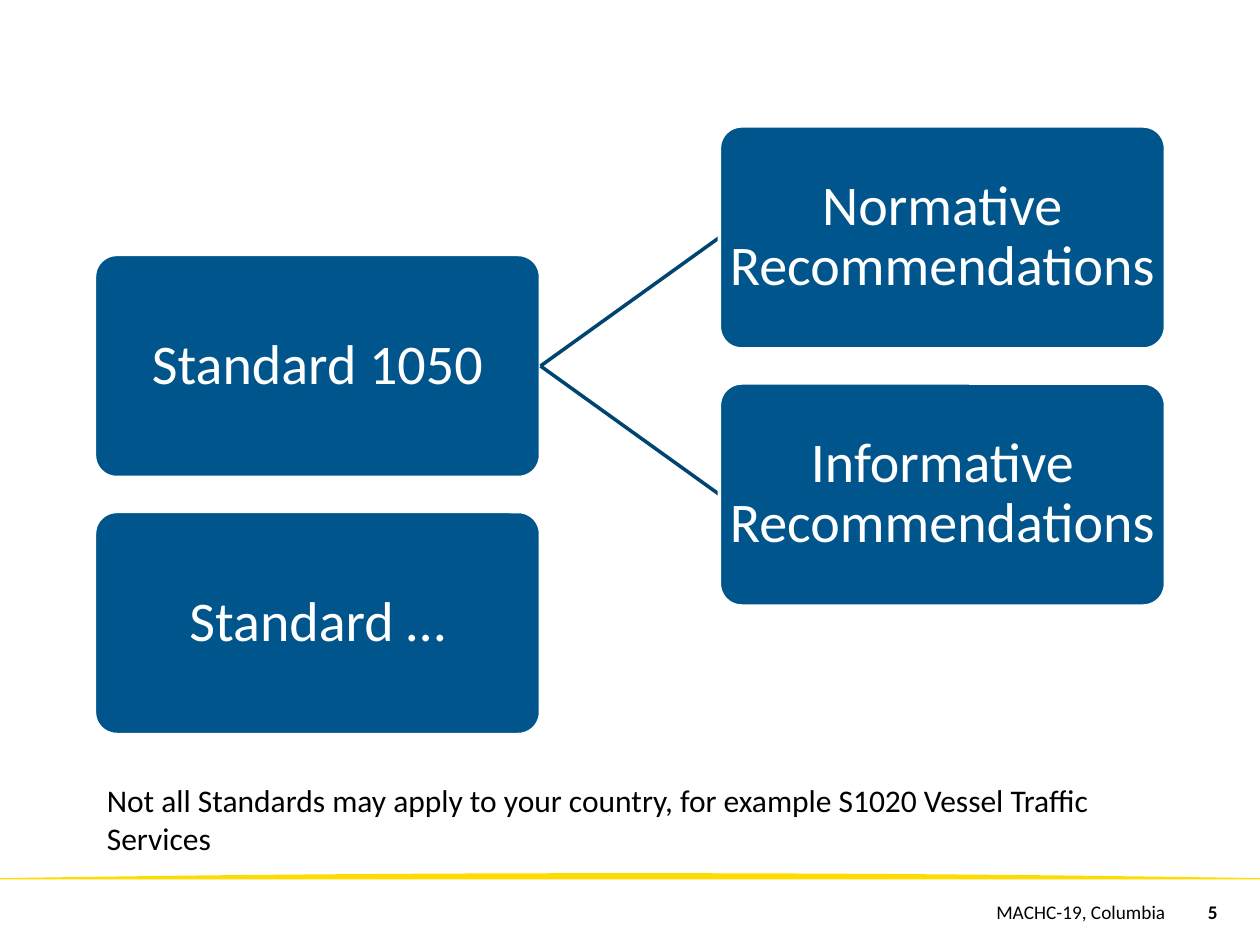
from dataclasses import dataclass

from lxml.etree import SubElement
from pptx import Presentation
from pptx.dml.color import RGBColor
from pptx.enum.shapes import MSO_CONNECTOR, MSO_SHAPE
from pptx.enum.text import MSO_ANCHOR, PP_ALIGN
from pptx.oxml.ns import qn
from pptx.util import Inches, Pt

BLUE, DARK_BLUE, YELLOW = "00558C", "004470", "FFDC00"
WHITE, BLACK = "FFFFFF", "000000"
BOX_WIDTH, BOX_HEIGHT = 3.54, 1.77
LEFT_COLUMN, RIGHT_COLUMN = 0.75, 5.71
TOP, ROW_STEP = 1.0, 1.02


@dataclass(frozen=True)
class Node:
    label: str
    left: float
    row: int

    @property
    def top(self) -> float:
        return TOP + self.row * ROW_STEP

    @property
    def middle(self) -> float:
        return self.top + BOX_HEIGHT / 2


@dataclass(frozen=True)
class Caption:
    text: str
    left: float
    top: float
    width: float
    height: float
    size: int
    align: PP_ALIGN = PP_ALIGN.LEFT
    anchor: MSO_ANCHOR = MSO_ANCHOR.MIDDLE
    margin_x: float = 0
    margin_y: float = 0
    bold: bool = False


STANDARD = Node("Standard 1050", LEFT_COLUMN, 1)
RECOMMENDATIONS = [
    Node("Normative Recommendations", RIGHT_COLUMN, 0),
    Node("Informative Recommendations", RIGHT_COLUMN, 2),
]
OTHER_STANDARD = Node("Standard …", LEFT_COLUMN, 3)

CAPTIONS = [
    Caption("5", 9.25, 6.98, 0.75, 0.52, 11, PP_ALIGN.CENTER, bold=True),
    Caption("MACHC-19, Columbia", 3.11, 6.98, 6.14, 0.52, 11, PP_ALIGN.RIGHT),
    Caption(
        "Not all Standards may apply to your country, "
        "for example S1020 Vessel Traffic Services",
        0.75, 6.15, 8.5, 0.71, 18,
        anchor=MSO_ANCHOR.TOP, margin_x=0.1, margin_y=0.05,
    ),
]


def rgb(value: str) -> RGBColor:
    return RGBColor.from_string(value)


def write(frame, text: str, size: int, color: str, align: PP_ALIGN,
          anchor: MSO_ANCHOR, margin_x: float, margin_y: float,
          bold: bool = False):
    frame.word_wrap = True
    frame.vertical_anchor = anchor
    frame.margin_left = frame.margin_right = Inches(margin_x)
    frame.margin_top = frame.margin_bottom = Inches(margin_y)
    frame.text = text
    paragraph = frame.paragraphs[0]
    paragraph.alignment = align
    font = paragraph.runs[0].font
    font.name = "Calibri"
    font.size = Pt(size)
    font.bold = bold
    font.color.rgb = rgb(color)
    return paragraph


def draw_footer_arc(slide) -> None:
    steps, width, edge, crest, bottom = 40, 10.01, 6.97, 6.93, 6.98
    arc = []
    for step in range(steps + 1):
        offset = 2 * step / steps - 1
        arc.append((Inches(width * step / steps),
                    Inches(crest + (edge - crest) * offset ** 2)))
    base = [(Inches(width), Inches(bottom)), (0, Inches(bottom))]
    builder = slide.shapes.build_freeform(*arc[0], scale=1.0)
    builder.add_line_segments(arc[1:] + base, close=True)
    band = builder.convert_to_shape()
    band.shadow.inherit = False
    band.fill.solid()
    band.fill.fore_color.rgb = rgb(YELLOW)
    band.line.fill.background()


def draw_node(slide, node: Node) -> None:
    box = slide.shapes.add_shape(
        MSO_SHAPE.ROUNDED_RECTANGLE, Inches(node.left), Inches(node.top),
        Inches(BOX_WIDTH), Inches(BOX_HEIGHT))
    box.adjustments[0] = 0.1
    box.shadow.inherit = False
    box.fill.solid()
    box.fill.fore_color.rgb = rgb(BLUE)
    box.line.color.rgb = rgb(WHITE)
    box.line.width = Pt(2)
    paragraph = write(box.text_frame, node.label, 32, WHITE, PP_ALIGN.CENTER,
                      MSO_ANCHOR.MIDDLE, 0.02, 0.02)
    paragraph.line_spacing = 0.9


def draw_link(slide, parent: Node, child: Node) -> None:
    link = slide.shapes.add_connector(
        MSO_CONNECTOR.STRAIGHT,
        Inches(parent.left + BOX_WIDTH), Inches(parent.middle),
        Inches(child.left), Inches(child.middle))
    link.line.color.rgb = rgb(DARK_BLUE)
    link.line.width = Pt(2)
    SubElement(link._element.spPr, qn("a:effectLst"))


def draw_caption(slide, caption: Caption) -> None:
    box = slide.shapes.add_textbox(
        Inches(caption.left), Inches(caption.top),
        Inches(caption.width), Inches(caption.height))
    write(box.text_frame, caption.text, caption.size, BLACK, caption.align,
          caption.anchor, caption.margin_x, caption.margin_y, caption.bold)


def main() -> None:
    presentation = Presentation()
    presentation.slide_width = Inches(10)
    presentation.slide_height = Inches(7.5)
    slide = presentation.slides.add_slide(presentation.slide_layouts[6])

    draw_footer_arc(slide)
    draw_node(slide, STANDARD)
    for recommendation in RECOMMENDATIONS:
        draw_link(slide, STANDARD, recommendation)
        draw_node(slide, recommendation)
    draw_node(slide, OTHER_STANDARD)
    for caption in CAPTIONS:
        draw_caption(slide, caption)

    presentation.save("out.pptx")


if __name__ == "__main__":
    main()
